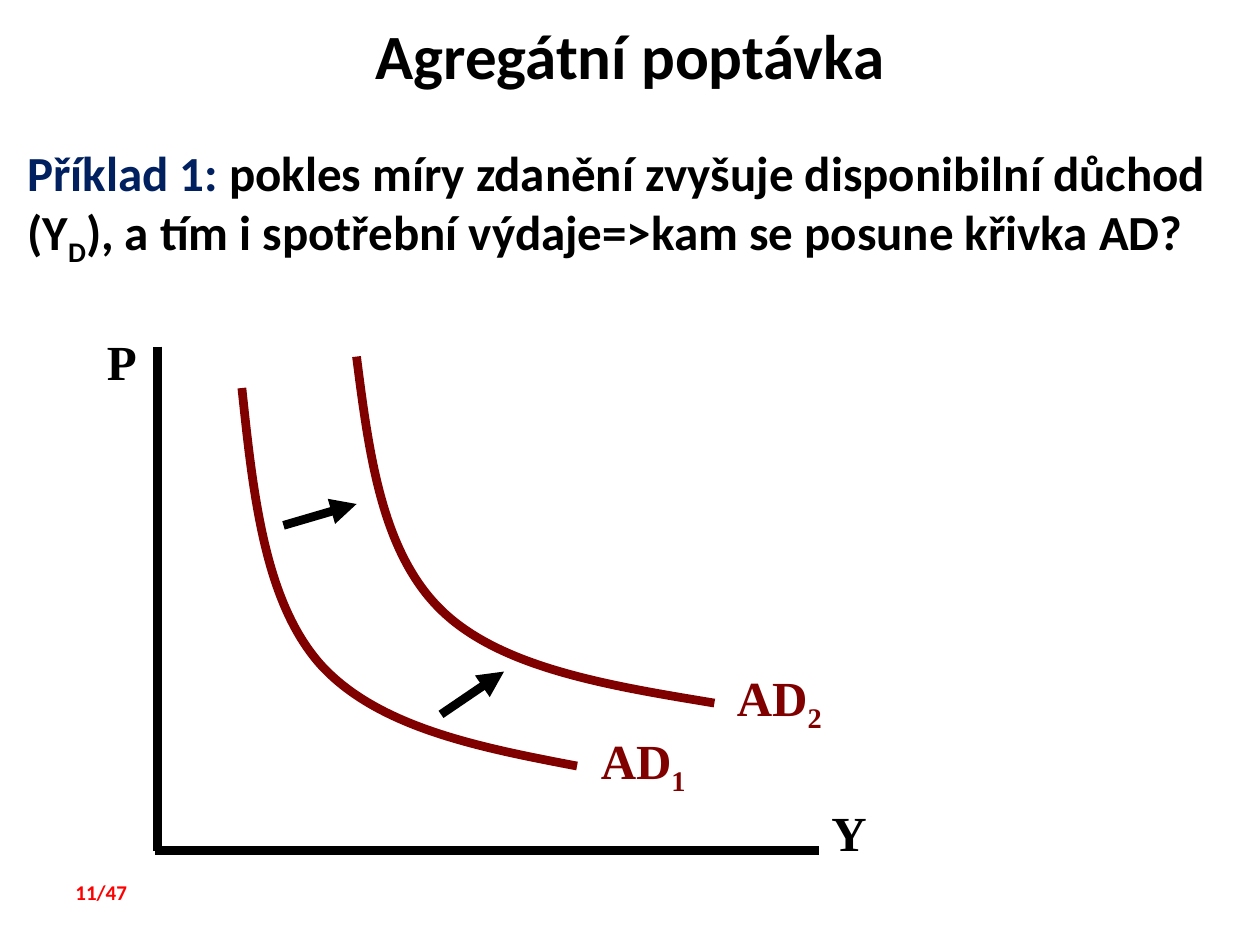
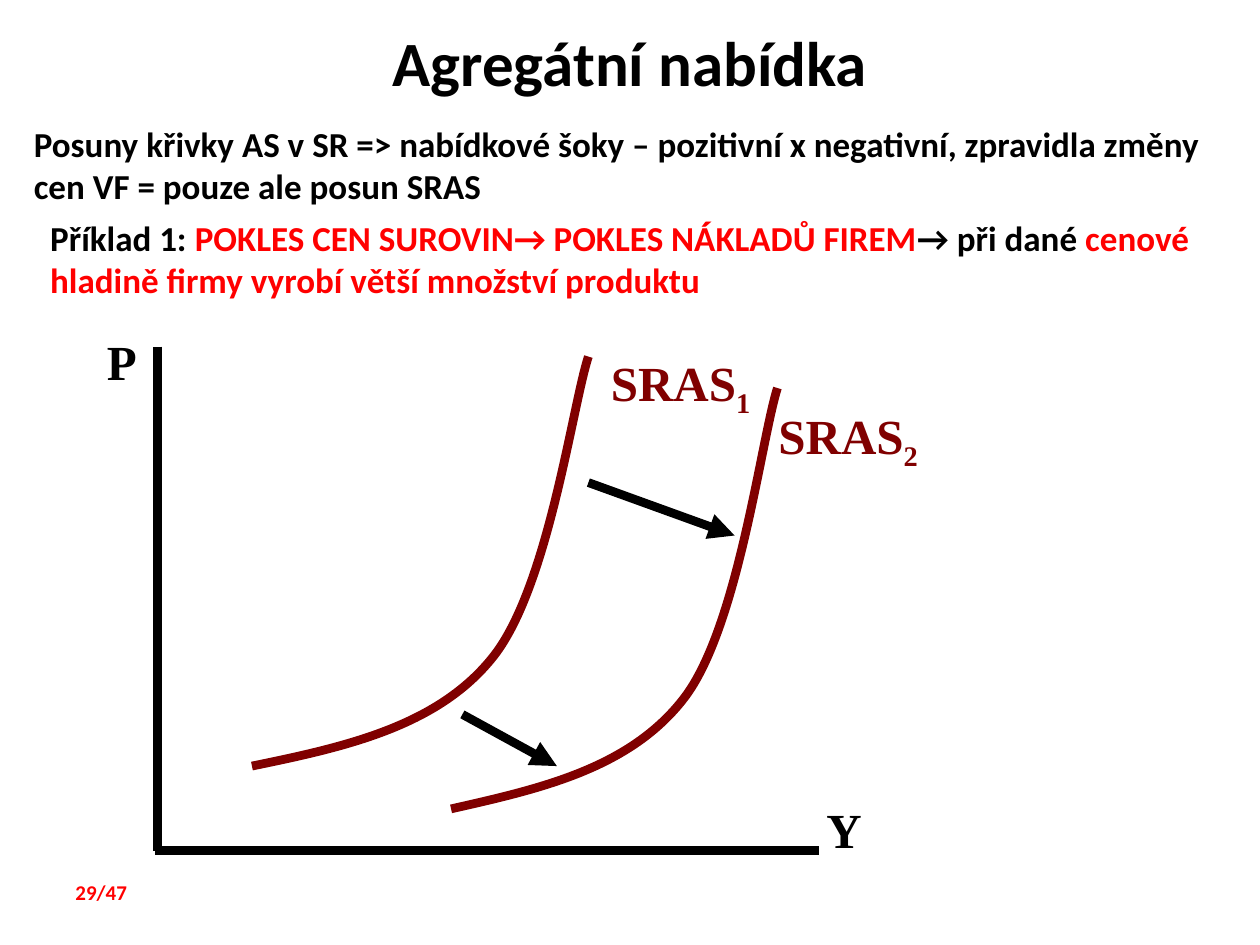
from dataclasses import dataclass
from lxml import etree
from pptx import Presentation
from pptx import util as u
from pptx.dml.color import RGBColor
from pptx.enum import shapes, text
from pptx.oxml.ns import qn

SCALE = 9144


@dataclass(frozen=True)
class Box:
    left: int
    top: int
    width: int
    height: int

    def emu(self):
        return [px(v) for v in (self.left, self.top, self.width, self.height)]

    def inside(self, x, y, width, height):
        return Box(self.left + x, self.top + y, width, height)

    def point(self, x, y):
        return px(self.left + x), px(self.top + y)


@dataclass(frozen=True)
class Theme:
    sans: str = "Calibri"
    serif: str = "Times New Roman"
    black: str = "000000"
    white: str = "FFFFFF"
    navy: str = "002060"
    red: str = "FF0000"
    maroon: str = "800000"
    title_size: int = 36
    large_size: int = 28
    body_size: int = 20
    footer_size: int = 12
    stroke: float = 5
    upright_stroke: float = 5.5


THEME = Theme()
PLOT = Box(125, 275, 525, 400)
FOOTER = Box(50, 693, 92, 30)
LABEL_HEIGHT = 57


def px(value):
    return u.Emu(value * SCALE)


def apply(target, values):
    for name, value in values.items():
        setattr(target, name, value)


def write(frame, spans, size, face=THEME.sans, align=text.PP_ALIGN.LEFT,
          anchor=text.MSO_ANCHOR.TOP):
    apply(frame, {"word_wrap": True, "auto_size": text.MSO_AUTO_SIZE.NONE,
                  "vertical_anchor": anchor})
    para = frame.paragraphs[0]
    apply(para, {"alignment": align, "space_before": u.Pt(0)})
    for words, colour, *baseline in spans:
        span = para.add_run()
        span.text = words
        apply(span.font, {"name": face, "size": u.Pt(size), "bold": True})
        span.font.color.rgb = RGBColor.from_string(colour)
        if baseline:
            span._r.get_or_add_rPr().set("baseline", str(baseline[0] * 1000))


def add_text(page, box, spans, size, **style):
    write(page.shapes.add_textbox(*box.emu()).text_frame, spans, size, **style)


def add_title(page, box, words):
    title = page.shapes.title
    apply(title, dict(zip(("left", "top", "width", "height"), box.emu())))
    title.fill.solid()
    title.fill.fore_color.rgb = RGBColor.from_string(THEME.white)
    write(title.text_frame, [(words, THEME.black)], THEME.title_size,
          align=text.PP_ALIGN.CENTER)


def add_stroke(page, box, start, end, width=THEME.stroke, arrow=False):
    line = page.shapes.add_connector(shapes.MSO_CONNECTOR.STRAIGHT,
                                     *box.point(*start), *box.point(*end))
    line.line.width = u.Pt(width)
    line.line.color.rgb = RGBColor.from_string(THEME.black)
    if arrow:
        etree.SubElement(line.line._get_or_add_ln(), qn("a:tailEnd"), type="triangle")
    etree.SubElement(line._element.spPr, qn("a:effectLst"))


def add_curve(page, box, points):
    start, *rest = [box.point(*point) for point in points]
    builder = page.shapes.build_freeform(*start)
    builder.add_line_segments(rest, close=False)
    curve = builder.convert_to_shape()
    curve.shadow.inherit = False
    curve.fill.background()
    curve.line.width = u.Pt(THEME.stroke)
    curve.line.color.rgb = RGBColor.from_string(THEME.maroon)
    segments = list(curve._element.iter(qn("a:lnTo")))
    outline = segments[0].getparent()
    for first in range(0, len(segments), 3):
        bezier = etree.SubElement(outline, qn("a:cubicBezTo"))
        for segment in segments[first:first + 3]:
            bezier.append(segment[0])
            outline.remove(segment)


def add_label(page, box, at, width, name, colour, index=""):
    spans = [(name, colour)]
    if index:
        spans.append((index, colour, -25))
    add_text(page, box.inside(*at, width, LABEL_HEIGHT), spans,
             THEME.large_size, face=THEME.serif)


def add_axes(page, box, output_at):
    add_label(page, box, (-50, -17), 67, "P", THEME.black)
    add_label(page, box, output_at, 67, "Y", THEME.black)
    add_stroke(page, box, (0, 0), (0, box.height), THEME.upright_stroke)
    add_stroke(page, box, (-2, box.height), (box.width, box.height))


def add_plot(page, box, name, label_width, curves, arrows, output_at):
    add_axes(page, box, output_at)
    for index, (points, label_at) in enumerate(curves, 1):
        add_curve(page, box, points)
        add_label(page, box, label_at, label_width, name, THEME.maroon, str(index))
    for start, end in arrows:
        add_stroke(page, box, start, end, arrow=True)


def add_page(deck, title_box, title, number):
    page = deck.slides.add_slide(deck.slide_layouts[5])
    add_title(page, title_box, title)
    add_text(page, FOOTER, [(f"{number}/47", THEME.red)], THEME.footer_size)
    return page


def demand_page(deck):
    page = add_page(deck, Box(0, 8, 1000, 71), "Agregátní poptávka", 11)
    add_text(page, Box(12, 108, 976, 104), [
        ("Příklad 1: ", THEME.navy),
        ("pokles míry zdanění zvyšuje disponibilní důchod (Y", THEME.black),
        ("D", THEME.black, -25),
        ("), a tím i spotřební výdaje=>kam se posune křivka AD?", THEME.black),
    ], THEME.large_size)
    curves = [
        ([(67, 33), (76, 118), (85, 202), (129, 252),
          (174, 302), (254, 318), (333, 333)], (342, 300)),
        ([(158, 8), (168, 86), (178, 163), (225, 209),
          (272, 255), (357, 269), (442, 283)], (450, 250)),
    ]
    arrows = [((100, 142), (158, 125)), ((225, 292), (275, 258))]
    add_plot(page, PLOT, "AD", 117, curves, arrows, (525, 357))


def supply_page(deck):
    page = add_page(deck, Box(0, 14, 1000, 70), "Agregátní nabídka", 29)
    add_text(page, Box(17, 92, 945, 77), [
        ("Posuny křivky AS v SR => nabídkové šoky – pozitivní x negativní, "
         "zpravidla změny cen VF = pouze ale posun SRAS", THEME.black),
    ], THEME.body_size, align=text.PP_ALIGN.JUSTIFY)
    add_text(page, Box(30, 167, 945, 77), [
        ("Příklad 1: ", THEME.black),
        ("POKLES CEN SUROVIN→ POKLES NÁKLADŮ FIREM", THEME.red),
        ("→ při dané ", THEME.black),
        ("cenové hladině firmy vyrobí větší množství produktu", THEME.red),
    ], THEME.body_size)
    curves = [
        ([(75, 333), (148, 318), (221, 302), (265, 248),
          (310, 194), (329, 48), (342, 8)], (350, 0)),
        ([(233, 367), (304, 351), (375, 335), (418, 279),
          (461, 223), (479, 74), (492, 33)], (483, 42)),
    ]
    arrows = [((242, 292), (317, 333)), ((342, 108), (458, 150))]
    add_plot(page, PLOT, "SRAS", 142, curves, arrows, (521, 355))


def main():
    deck = Presentation()
    apply(deck, {"slide_width": px(1000), "slide_height": px(750)})
    demand_page(deck)
    supply_page(deck)
    deck.save("out.pptx")


if __name__ == "__main__":
    main()
